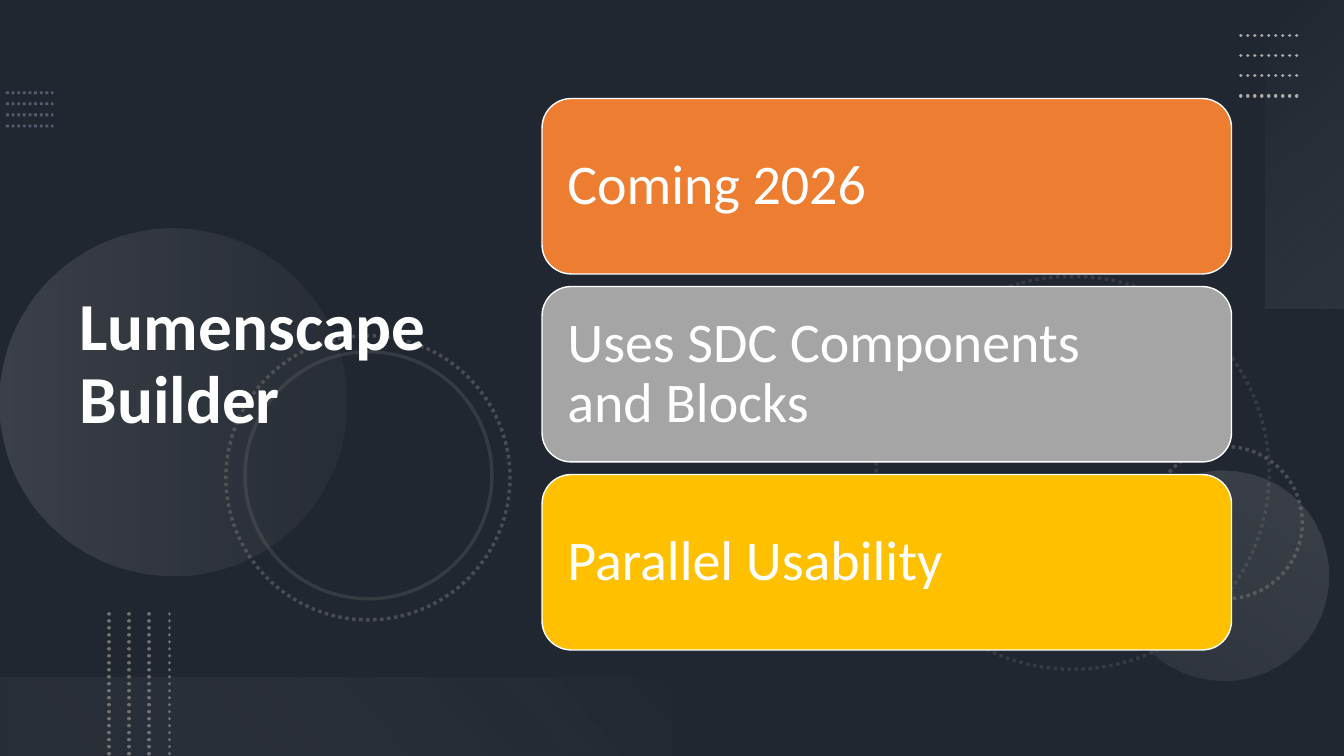
from dataclasses import dataclass
from typing import Optional

import pptx
import pptx.dml.color
import pptx.enum.dml
import pptx.enum.shapes
import pptx.enum.text
import pptx.oxml
import pptx.oxml.ns
import pptx.util

Pt = pptx.util.Pt
RGBColor = pptx.dml.color.RGBColor
Shape = pptx.enum.shapes.MSO_SHAPE
Dash = pptx.enum.dml.MSO_LINE
Anchor = pptx.enum.text.MSO_ANCHOR
Align = pptx.enum.text.PP_ALIGN
qn = pptx.oxml.ns.qn

FONT = "Calibri"
WHITE = RGBColor(0xFF, 0xFF, 0xFF)
BLACK = RGBColor(0x00, 0x00, 0x00)
SLATE = RGBColor(0x44, 0x54, 0x6A)
BLUE_GREY = RGBColor(0x84, 0x97, 0xB0)
DARK_GREY = RGBColor(0x76, 0x71, 0x71)
LIGHT_GREY = RGBColor(0xAF, 0xAB, 0xAB)
PALE_GREY = RGBColor(0xF3, 0xF2, 0xF2)
ORANGE = RGBColor(0xED, 0x7D, 0x31)
GREY = RGBColor(0xA5, 0xA5, 0xA5)
GOLD = RGBColor(0xFF, 0xC0, 0x00)


@dataclass(frozen=True)
class Stop:
    position: float
    color: RGBColor
    opacity: float


@dataclass(frozen=True)
class Decoration:
    """An unlabelled shape: a gradient area with stops, a ring without."""
    kind: Shape
    left: float
    top: float
    width: float
    height: float
    rotation: float
    stops: tuple[Stop, ...] = ()
    angle: float = 90
    dash: Optional[Dash] = None
    opacity: float = 100


@dataclass(frozen=True)
class DotGroup:
    """Parallel dotted lines: the first one, then equal steps."""
    left: float
    top: float
    run_x: float
    run_y: float
    step_x: float
    step_y: float
    color: RGBColor
    weight: float
    opacity: float = 100
    cap: str = "rnd"


@dataclass(frozen=True)
class Card:
    label: str
    color: RGBColor


def ring(left: float, top: float, size: float, rotation: float,
         opacity: float, dash: Optional[Dash] = Dash.ROUND_DOT) -> Decoration:
    return Decoration(Shape.OVAL, left, top, size, size, rotation, dash=dash, opacity=opacity)


def disc(left: float, top: float, size: float, rotation: float,
         first: Stop, last: Stop) -> Decoration:
    return Decoration(Shape.OVAL, left, top, size, size, rotation, (first, last))


TITLE = "Lumenscape Builder"
DECORATIONS = (
    ring(625.7, 197.3, 280.8, 75, 25),
    ring(821.5, 319, 108.7, 270, 50),
    disc(0, 163.4, 247.7, 270, Stop(0, LIGHT_GREY, 20), Stop(1, DARK_GREY, 10)),
    disc(799.2, 336.2, 149.8, 210, Stop(0, LIGHT_GREY, 10), Stop(1, LIGHT_GREY, 20)),
    ring(161.3, 239.8, 203, 75, 50),
    ring(175, 251.3, 176.4, 75, 25, None),
    Decoration(Shape.RECTANGLE, 822.2, 82.1, 220.3, 56.2, 270,
               (Stop(0, PALE_GREY, 0), Stop(1, LIGHT_GREY, 10)), 140),
    Decoration(Shape.RECTANGLE, 0, 483.8, 480.2, 56.2, 180,
               (Stop(0.1, DARK_GREY, 10), Stop(1, PALE_GREY, 0)), 140),
)
LINES_PER_GROUP = 4
DOT_GROUPS = (
    DotGroup(4.3, 66.2, 33.8, 0, 0, 7.92, BLUE_GREY, 2, 50, "flat"),
    DotGroup(886.3, 25.2, 43.2, 0, 0, 14.4, LIGHT_GREY, 2.5),
    DotGroup(77.8, 438.5, 0, 101.5, 14.4, 0, DARK_GREY, 2.5),
)
CARDS = (
    Card("Coming 2026", ORANGE),
    Card("Uses SDC Components\vand Blocks", GREY),
    Card("Parallel Usability", GOLD),
)
CARD_LEFT, CARD_TOP, CARD_WIDTH, CARD_HEIGHT, CARD_PITCH = 387.2, 70.4, 492.5, 125.3, 134.3


def add_element(parent, tag: str, attributes: str = "") -> None:
    namespace = pptx.oxml.ns.nsdecls("a")
    parent.append(pptx.oxml.parse_xml(f"<a:{tag} {namespace} {attributes}/>"))


def set_opacities(shape, *opacities: float) -> None:
    """Give the colours of a shape, in order, their opacity in percent."""
    for color, opacity in zip(shape._element.spPr.iter(qn("a:srgbClr")), opacities):
        if opacity < 100:
            add_element(color, "alpha", f'val="{round(opacity * 1000)}"')


def add_box(page, kind: Shape, left: float, top: float, width: float, height: float):
    box = page.shapes.add_shape(kind, Pt(left), Pt(top), Pt(width), Pt(height))
    box.shadow.inherit = False
    return box


def add_decoration(page, item: Decoration) -> None:
    box = add_box(page, item.kind, item.left, item.top, item.width, item.height)
    box.rotation = item.rotation
    if item.stops:
        box.line.fill.background()
        box.fill.gradient()
        box.fill.gradient_angle = 360 - item.angle
        for target, stop in zip(box.fill.gradient_stops, item.stops):
            target.position = stop.position
            target.color.rgb = stop.color
        set_opacities(box, *(stop.opacity for stop in item.stops))
    else:
        box.fill.background()
        box.line.color.rgb = DARK_GREY
        box.line.width = Pt(2.5)
        if item.dash is not None:
            box.line.dash_style = item.dash
        set_opacities(box, item.opacity)


def add_dot_group(page, group: DotGroup) -> None:
    for index in range(LINES_PER_GROUP):
        left = group.left + index * group.step_x
        top = group.top + index * group.step_y
        line = page.shapes.add_connector(
            pptx.enum.shapes.MSO_CONNECTOR.STRAIGHT,
            Pt(left), Pt(top), Pt(left + group.run_x), Pt(top + group.run_y))
        line.line.color.rgb = group.color
        line.line.width = Pt(group.weight)
        line.line.dash_style = Dash.ROUND_DOT
        properties = line._element.spPr
        properties.find(qn("a:ln")).set("cap", group.cap)
        set_opacities(line, group.opacity)
        add_element(properties, "effectLst")


def set_text(box, text: str, size: float, bold: bool = False) -> None:
    frame = box.text_frame
    frame.text = text
    frame.word_wrap = True
    frame.vertical_anchor = Anchor.MIDDLE
    para = frame.paragraphs[0]
    para.alignment = Align.LEFT
    para.line_spacing = 0.9
    for span in para.runs:
        span.font.name = FONT
        span.font.size = Pt(size)
        span.font.bold = bold
        span.font.color.rgb = WHITE


def add_card(page, card: Card, index: int) -> None:
    box = add_box(page, Shape.ROUNDED_RECTANGLE, CARD_LEFT,
                  CARD_TOP + index * CARD_PITCH, CARD_WIDTH, CARD_HEIGHT)
    box.fill.solid()
    box.fill.fore_color.rgb = card.color
    box.line.color.rgb = WHITE
    box.line.width = Pt(1)
    set_text(box, card.label, 40)
    frame = box.text_frame
    frame.margin_left = frame.margin_right = Pt(12)
    frame.margin_top = frame.margin_bottom = Pt(12)


def main() -> None:
    deck = pptx.Presentation()
    deck.slide_width, deck.slide_height = Pt(960), Pt(540)
    page = deck.slides.add_slide(deck.slide_layouts[6])

    # Darkened background
    page.background.fill.solid()
    page.background.fill.fore_color.rgb = SLATE
    shade = add_box(page, Shape.RECTANGLE, 0, 0, 960, 540)
    shade.fill.solid()
    shade.fill.fore_color.rgb = BLACK
    shade.line.fill.background()
    set_opacities(shade, 53)

    # Rings, discs, bands and dotted lines
    for item in DECORATIONS:
        add_decoration(page, item)
    for group in DOT_GROUPS:
        add_dot_group(page, group)

    # Title and cards
    title = page.shapes.add_textbox(Pt(49.7), Pt(38.9), Pt(330.5), Pt(444.2))
    set_text(title, TITLE, 48, bold=True)
    for index, card in enumerate(CARDS):
        add_card(page, card, index)

    deck.save("out.pptx")


if __name__ == "__main__":
    main()
